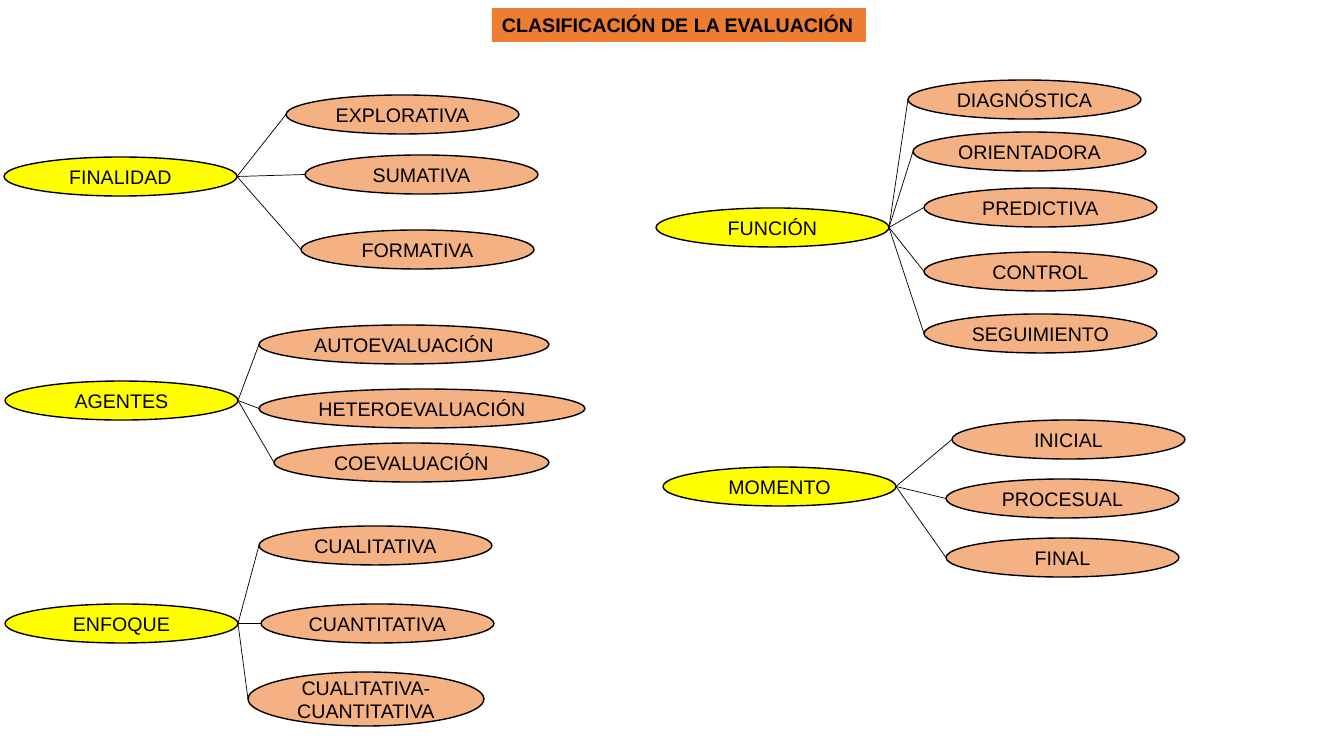
from pptx import Presentation
from pptx.dml.color import RGBColor
from pptx.enum.shapes import MSO_CONNECTOR, MSO_SHAPE
from pptx.enum.text import MSO_ANCHOR, MSO_AUTO_SIZE, PP_ALIGN
from pptx.oxml.ns import qn
from pptx.util import Pt
from lxml import etree

RECTANGLE, ELLIPSE = MSO_SHAPE.RECTANGLE, MSO_SHAPE.OVAL
STRAIGHT = MSO_CONNECTOR.STRAIGHT
MIDDLE, CENTER, LEFT = MSO_ANCHOR.MIDDLE, PP_ALIGN.CENTER, PP_ALIGN.LEFT
GROW = MSO_AUTO_SIZE.SHAPE_TO_FIT_TEXT

TITLE = ("CLASIFICACIÓN DE LA EVALUACIÓN", 492, 8, 374, 34)
WIDTH, HEIGHT = 233, 39
CRITERIA = [
    (("FINALIDAD", 4, 157), [
        ("EXPLORATIVA", 286, 95),
        ("SUMATIVA", 305, 155),
        ("FORMATIVA", 301, 230),
    ]),
    (("FUNCIÓN", 656, 208), [
        ("DIAGNÓSTICA", 908, 80),
        ("ORIENTADORA", 913, 132),
        ("PREDICTIVA", 924, 188),
        ("CONTROL", 924, 252),
        ("SEGUIMIENTO", 924, 314),
    ]),
    (("AGENTES", 5, 381), [
        ("AUTOEVALUACIÓN", 259, 325, 290),
        ("HETEROEVALUACIÓN", 259, 389, 326),
        ("COEVALUACIÓN", 274, 443, 275),
    ]),
    (("MOMENTO", 663, 467), [
        ("INICIAL", 952, 420),
        ("PROCESUAL", 946, 479),
        ("FINAL", 946, 538),
    ]),
    (("ENFOQUE", 5, 604), [
        ("CUALITATIVA", 259, 526),
        ("CUANTITATIVA", 261, 604),
        ("CUALITATIVA-CUANTITATIVA", 248, 672, 236, 54),
    ]),
]
COLORS = {"title": "ED7D31", "criterion": "FFFF00", "kind": "F4B183", "ink": "000000"}
INK = RGBColor.from_string(COLORS["ink"])
FONT = {"name": "Arial", "size": Pt(14)}
TITLE_FRAME = {"word_wrap": False, "auto_size": GROW}
NODE_FRAME = {"word_wrap": True, "vertical_anchor": MIDDLE}


def px(length):
    return round(length * 914400 / 100.8)


def apply(target, values):
    for key, value in values.items():
        setattr(target, key, value)


def add_label(preset, role, frame_format, align, bold,
              text, left, top, width=WIDTH, height=HEIGHT):
    label = slide.shapes.add_shape(preset, px(left), px(top), px(width), px(height))
    label.shadow.inherit = False
    label.fill.solid()
    label.fill.fore_color.rgb = RGBColor.from_string(COLORS[role])
    frame = label.text_frame
    apply(frame, frame_format)
    paragraph = frame.paragraphs[0]
    paragraph.alignment = align
    run = paragraph.add_run()
    run.text = text
    apply(run.font, {**FONT, "bold": bold})
    run.font.color.rgb = INK
    return label


def add_node(role, item):
    node = add_label(ELLIPSE, role, NODE_FRAME, CENTER, False, *item)
    node.line.color.rgb = INK
    node.line.width = Pt(1)
    return node


def add_branch(criterion, kind):
    branch = slide.shapes.add_connector(
        STRAIGHT,
        criterion.left + criterion.width, criterion.top + criterion.height // 2,
        kind.left, kind.top + kind.height // 2)
    branch.line.color.rgb = INK
    branch.line.width = Pt(0.5)
    etree.SubElement(branch._element.spPr, qn("a:effectLst"))


prs = Presentation()
prs.slide_width, prs.slide_height = px(1344), px(756)
slide = prs.slides.add_slide(prs.slide_layouts[6])

title = add_label(RECTANGLE, "title", TITLE_FRAME, LEFT, True, *TITLE)
title.line.fill.background()

for criterion_item, kinds in CRITERIA:
    criterion = add_node("criterion", criterion_item)
    for kind_item in kinds:
        add_branch(criterion, add_node("kind", kind_item))

prs.save("out.pptx")
